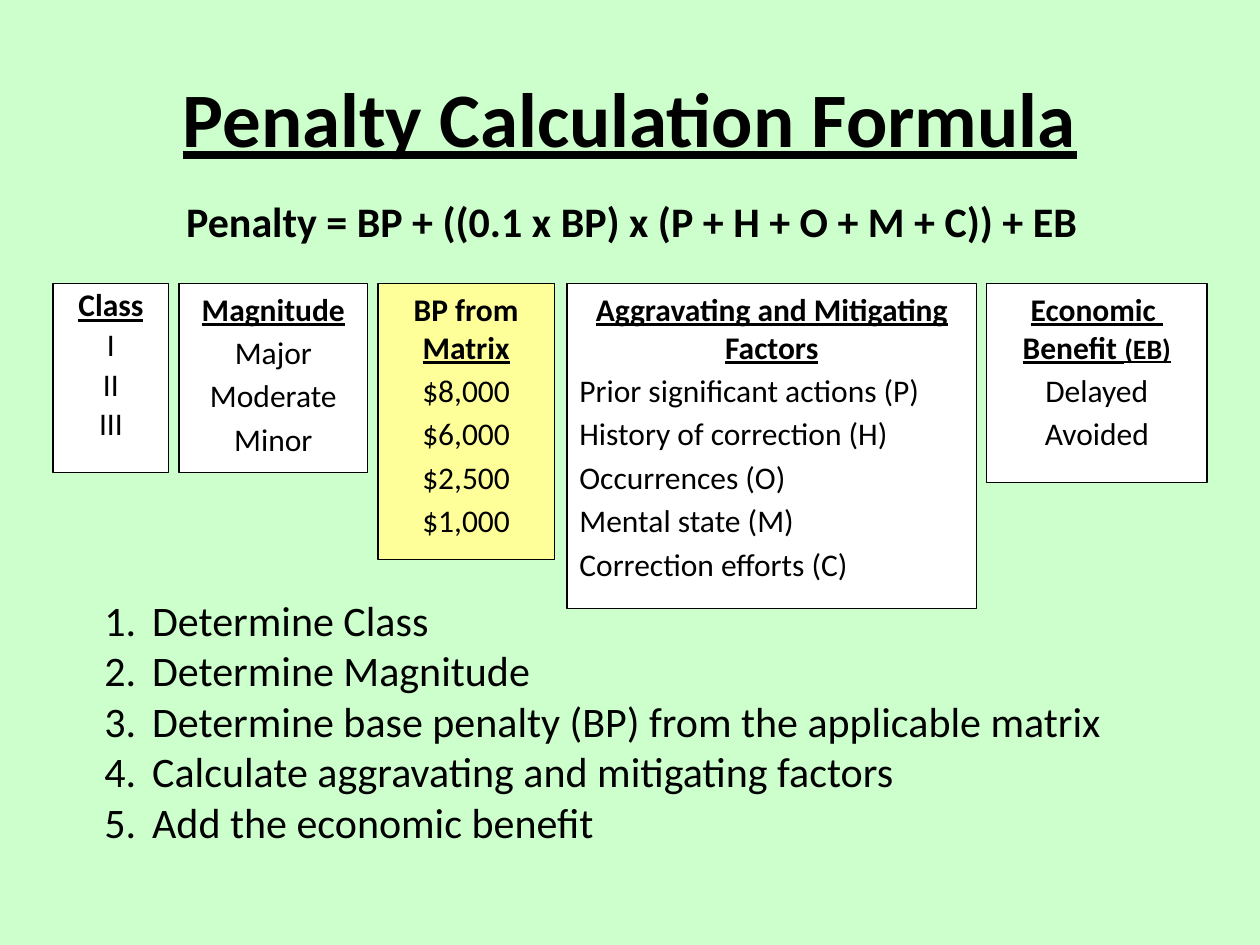
from dataclasses import dataclass

import pptx
import pptx.dml.color
import pptx.enum.shapes
import pptx.enum.text
import pptx.oxml.ns
import pptx.util
from lxml import etree

Inches = pptx.util.Inches
Pt = pptx.util.Pt
RGBColor = pptx.dml.color.RGBColor
Align = pptx.enum.text.PP_ALIGN
Anchor = pptx.enum.text.MSO_ANCHOR

FONT = "Calibri"
BLACK = RGBColor(0x00, 0x00, 0x00)
WHITE = RGBColor(0xFF, 0xFF, 0xFF)
YELLOW = RGBColor(0xFF, 0xFF, 0x99)
GREEN = RGBColor(0xCC, 0xFF, 0xCC)

CARD_TOP = 2.25
CARD_GAP = Pt(3.2)
HANGING = Inches(0.38)


@dataclass
class Span:
    text: str
    size: float = 18
    underline: bool = True


@dataclass
class Card:
    left: float
    width: float
    height: float
    heading: list[list[Span]]
    items: list[str]
    fill: RGBColor = WHITE
    item_align: Align = Align.CENTER
    line_spacing: float = 1.0


CARDS = [
    Card(0.42, 0.92, 1.5, [[Span("Class")]], ["I", "II", "III"], line_spacing=0.9),
    Card(1.42, 1.5, 1.5, [[Span("Magnitude")]], ["Major", "Moderate", "Minor"]),
    Card(3, 1.4, 2.19, [[Span("BP from ", underline=False), Span("Matrix")]],
         ["$8,000", "$6,000", "$2,500", "$1,000"], fill=YELLOW),
    Card(4.5, 3.25, 2.58, [[Span("Aggravating and Mitigating Factors")]],
         ["Prior significant actions (P)", "History of correction (H)",
          "Occurrences (O)", "Mental state (M)", "Correction efforts (C)"],
         item_align=Align.LEFT),
    Card(7.83, 1.75, 1.58,
         [[Span("Economic ")], [Span("Benefit "), Span("(EB)", size=16)]],
         ["Delayed", "Avoided"]),
]

STEPS = [
    "Determine Class",
    "Determine Magnitude",
    "Determine base penalty (BP) from the applicable matrix",
    "Calculate aggravating and mitigating factors",
    "Add the economic benefit",
]


def add_span(para, text: str, *, size: float, bold: bool = False,
             underline: bool = False) -> None:
    span = para.add_run()
    span.text = text
    span.font.name = FONT
    span.font.size = Pt(size)
    span.font.bold = bold
    span.font.underline = underline
    span.font.color.rgb = BLACK


def next_para(frame):
    """Return the empty first paragraph of the frame, or else a new one."""
    first = frame.paragraphs[0]
    return frame.add_paragraph() if first.runs else first


def add_text(page, left: float, top: float, width: float, height: float,
             lines: list[str], *, size: float, bold: bool = False,
             underline: bool = False, align: Align = Align.LEFT,
             anchor: Anchor = Anchor.TOP, numbered: bool = False) -> None:
    box = page.shapes.add_textbox(Inches(left), Inches(top), Inches(width), Inches(height))
    frame = box.text_frame
    frame.word_wrap = True
    frame.vertical_anchor = anchor
    for line in lines:
        para = next_para(frame)
        para.alignment = align
        add_span(para, line, size=size, bold=bold, underline=underline)
        if numbered:
            number_para(para)


def number_para(para) -> None:
    properties = para._p.get_or_add_pPr()
    properties.set("marL", str(HANGING))
    properties.set("indent", str(-HANGING))
    etree.SubElement(properties, pptx.oxml.ns.qn("a:buFont"), typeface="+mj-lt")
    etree.SubElement(properties, pptx.oxml.ns.qn("a:buAutoNum"), type="arabicPeriod")


def add_card(page, card: Card) -> None:
    box = page.shapes.add_shape(
        pptx.enum.shapes.MSO_SHAPE.RECTANGLE, Inches(card.left), Inches(CARD_TOP),
        Inches(card.width), Inches(card.height))
    box.shadow.inherit = False
    box.fill.solid()
    box.fill.fore_color.rgb = card.fill
    box.line.color.rgb = BLACK
    box.line.width = Pt(0.75)
    frame = box.text_frame
    frame.word_wrap = True
    frame.vertical_anchor = Anchor.TOP

    for index, spans in enumerate(card.heading):
        para = next_para(frame)
        para.alignment = Align.CENTER
        para.line_spacing = card.line_spacing
        para.space_before = Pt(0) if index else CARD_GAP
        for span in spans:
            add_span(para, span.text, size=span.size, bold=True, underline=span.underline)
    for item in card.items:
        para = next_para(frame)
        para.alignment = card.item_align
        para.line_spacing = card.line_spacing
        para.space_before = CARD_GAP
        add_span(para, item, size=18)


def main() -> None:
    deck = pptx.Presentation()
    deck.slide_width = Inches(10)
    deck.slide_height = Inches(7.5)
    page = deck.slides.add_slide(deck.slide_layouts[6])
    page.background.fill.solid()
    page.background.fill.fore_color.rgb = GREEN

    add_text(page, 0.5, 0.3, 9, 1.25, ["Penalty Calculation Formula"], size=44,
             bold=True, underline=True, align=Align.CENTER, anchor=Anchor.MIDDLE)
    for card in CARDS:
        add_card(page, card)
    add_text(page, 1.38, 1.5, 8.54, 0.5,
             ["Penalty = BP + ((0.1 x BP) x (P + H + O + M + C)) + EB"],
             size=24, bold=True)
    add_text(page, 0.73, 4.67, 9.27, 2.1, STEPS, size=24, numbered=True)

    deck.save("out.pptx")


if __name__ == "__main__":
    main()
